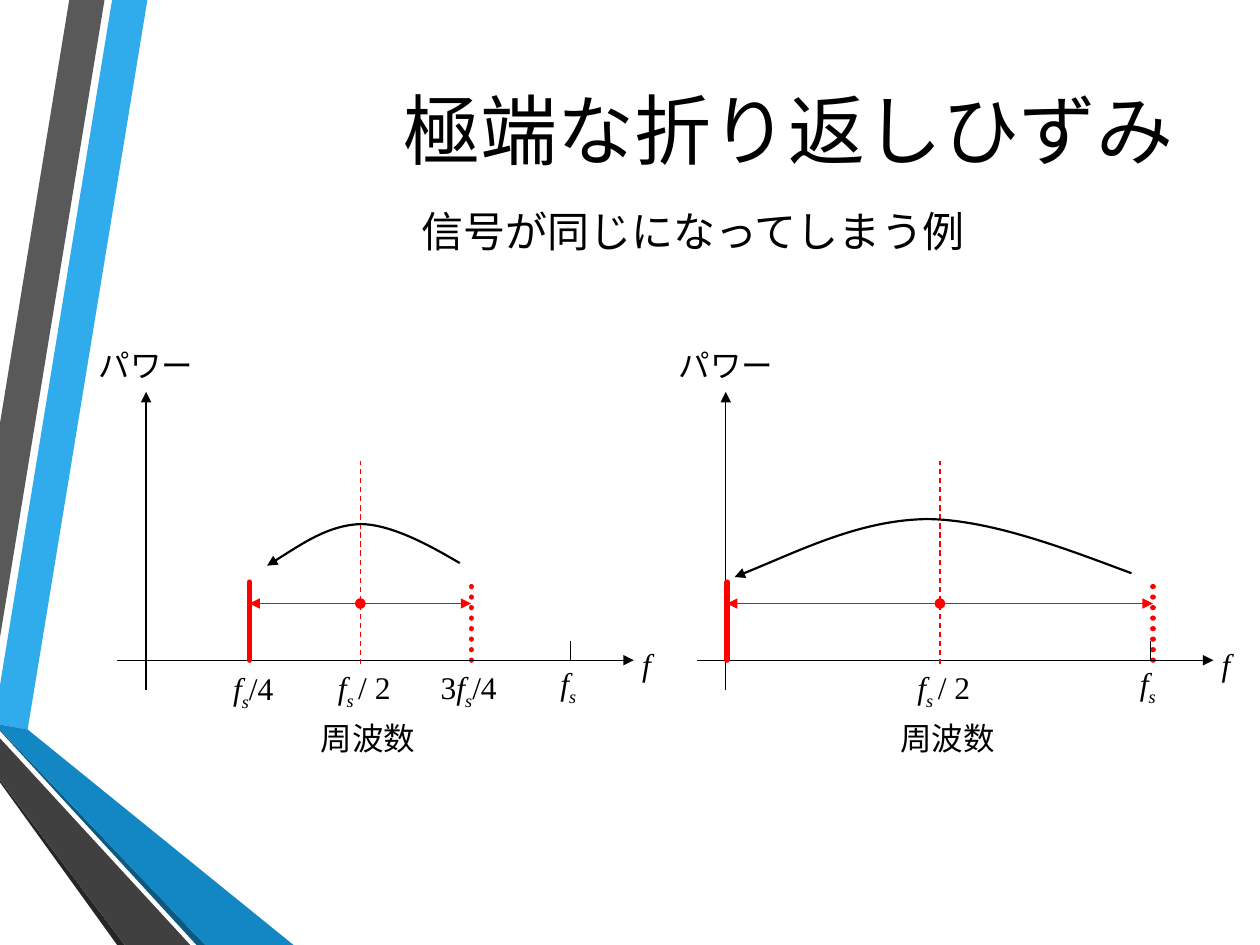
from dataclasses import dataclass

from lxml import etree
from pptx import Presentation
from pptx.dml.color import RGBColor
from pptx.enum.dml import MSO_LINE
from pptx.enum.shapes import MSO_CONNECTOR
from pptx.enum.text import MSO_ANCHOR, MSO_AUTO_SIZE, PP_ALIGN
from pptx.oxml.ns import qn
from pptx.util import Inches, Pt

STRAIGHT = MSO_CONNECTOR.STRAIGHT
DASH, DOTS = MSO_LINE.DASH, MSO_LINE.ROUND_DOT
CENTER, RIGHT = PP_ALIGN.CENTER, PP_ALIGN.RIGHT
MIDDLE = MSO_ANCHOR.MIDDLE
FIT_SHAPE = MSO_AUTO_SIZE.SHAPE_TO_FIT_TEXT


@dataclass(frozen=True)
class Theme:
    ink: str = "000000"
    signal: str = "FF0000"
    heading_font: str = "Cabin"
    label_font: str = "Times New Roman"
    title_size: int = 44
    subtitle_size: int = 24
    label_size: int = 18
    thin: float = 0.75
    curve: float = 1.25
    thick: float = 3


THEME = Theme()

RIBBONS = [
    ("30ACEC", [(0, 5.44), (0, 5.75), (0.22, 5.79), (1.17, 0), (0.89, 0)]),
    ("595959", [(0.83, 0), (0.55, 0), (0, 3.36), (0, 5.06)]),
    ("262626", [(0, 6.19), (0, 6.21), (0.93, 7.5), (0.99, 7.5)]),
    ("0C5A82", [(0, 5.79), (0, 5.8), (1.56, 7.5), (1.63, 7.5)]),
    ("1287C3", [(0, 5.79), (1.63, 7.5), (2.33, 7.5), (0.22, 5.79), (0, 5.75)]),
    ("404040", [(0, 6.19), (0.99, 7.5), (1.51, 7.5), (0, 5.86)]),
]

# Label runs: (text, italic, subscript)
F, SUB_S = ("f", True, False), ("s", True, True)
FS = [F, SUB_S]
FS_HALF = [F, ("s ", True, True), ("/ 2", False, False)]
FS_QUARTER = [*FS, ("/4", False, False)]
FS_THREE_QUARTERS = [("3", False, False), *FS_QUARTER]

BASE, ARROW_LEVEL = 5.24, 4.79
HALF, FULL = 1.7, 3.37  # distances of fs/2 and fs from the power axis
LABEL_HEIGHT = 0.4


def color(code):
    return RGBColor.from_string(code)


def format_span(span, size, font):
    span.font.size = Pt(size)
    span.font.name = font
    span.font.color.rgb = color(THEME.ink)


def add_freeform(shapes, points, close):
    points = [(Inches(x), Inches(y)) for x, y in points]
    builder = shapes.build_freeform(*points[0])
    builder.add_line_segments(points[1:], close=close)
    shape = builder.convert_to_shape()
    shape.shadow.inherit = False
    return shape


def add_ribbon(page, fill, points):
    ribbon = add_freeform(page.shapes, points, close=True)
    ribbon.fill.solid()
    ribbon.fill.fore_color.rgb = color(fill)
    ribbon.line.fill.background()


def style_line(line, code, width, dash=None, head=None, tail=None, cap="flat"):
    line.color.rgb = color(code)
    line.width = Pt(width)
    if dash:
        line.dash_style = dash
    outline = line.color and line.fill and line._get_or_add_ln()
    outline.set("cap", cap)
    for tag, kind in (("a:headEnd", head), ("a:tailEnd", tail)):
        if kind:
            etree.SubElement(outline, qn(tag), type=kind)


def add_line(group, start, end, code=THEME.ink, width=THEME.thin, **style):
    ends = [Inches(value) for value in (*start, *end)]
    connector = group.shapes.add_connector(STRAIGHT, *ends)
    style_line(connector.line, code, width, **style)
    etree.SubElement(connector._element.spPr, qn("a:effectLst"))


def add_curve(group, points):
    """Draw Bezier pieces: a start point, then three points for each piece."""
    shape = add_freeform(group.shapes, points, close=False)
    shape.fill.background()
    style_line(shape.line, THEME.ink, THEME.curve, tail="triangle")
    segments = list(shape._element.iter(qn("a:lnTo")))
    for first in range(0, len(segments), 3):
        piece = segments[first:first + 3]
        bezier = etree.Element(qn("a:cubicBezTo"))
        piece[0].addprevious(bezier)
        for segment in piece:
            bezier.append(segment[0])
            segment.getparent().remove(segment)


def add_label(group, center, top, runs, width=1.32, font=THEME.label_font):
    box = group.shapes.add_textbox(Inches(center - width / 2), Inches(top),
                                   Inches(width), Inches(LABEL_HEIGHT))
    frame = box.text_frame
    frame.word_wrap = True
    frame.auto_size = FIT_SHAPE
    para = frame.paragraphs[0]
    para.alignment = CENTER
    for text, italic, subscript in runs:
        span = para.add_run()
        span.text = text
        format_span(span, THEME.label_size, font)
        span.font.italic = italic
        if subscript:
            span.font._element.set("baseline", "-25000")


def add_headings(page):
    title = page.shapes.title
    title.left, title.top = Inches(0.92), Inches(0.46)
    title.width, title.height = Inches(8.5), Inches(1.12)
    title.text_frame.text = "極端な折り返しひずみ"
    title.text_frame.vertical_anchor = MIDDLE
    para = title.text_frame.paragraphs[0]
    para.alignment = RIGHT
    format_span(para.runs[0], THEME.title_size, THEME.heading_font)

    box = page.shapes.add_textbox(Inches(1.21), Inches(1.58), Inches(8.58), Inches(0.63))
    box.text_frame.word_wrap = True
    box.text_frame.text = "信号が同じになってしまう例"
    para = box.text_frame.paragraphs[0]
    para.alignment = CENTER
    para.space_before = para.space_after = Pt(6)
    format_span(para.runs[0], THEME.subtitle_size, THEME.label_font)


def add_spectrum(page, origin, reach, bar_top, curve):
    """Draw a spectrum whose two components lie `reach` either side of fs/2."""
    group = page.shapes.add_group_shape()
    middle, sampling = origin + HALF, origin + FULL
    low, high = middle - reach, middle + reach

    add_label(group, origin + 3.97, 5.07, [F])
    add_label(group, origin, 2.7, [("パワー", False, False)], font=THEME.heading_font)
    add_label(group, sampling - 0.02, 5.22, FS)
    add_line(group, (high, BASE), (high, bar_top), THEME.signal, THEME.thick,
             dash=DOTS, cap="rnd")
    add_line(group, (origin - 0.23, BASE), (origin + 3.87, BASE), tail="triangle")
    add_line(group, (origin, 5.48), (origin, 3.11), tail="triangle")
    add_line(group, (sampling, BASE), (sampling, 5.09))
    add_line(group, (middle, 5.27), (middle, 3.66), THEME.signal, dash=DASH)
    add_label(group, middle + 0.03, 5.25, FS_HALF, width=1.09)
    add_line(group, (low, BASE), (low, 4.62), THEME.signal, THEME.thick, cap="rnd")
    for target in (high, low):
        add_line(group, (middle, ARROW_LEVEL), (target, ARROW_LEVEL), THEME.signal,
                 head="oval", tail="triangle")
    add_label(group, middle + 0.06, 5.66, [("周波数", False, False)])
    add_curve(group, curve)
    return group


def main():
    deck = Presentation()
    deck.slide_width, deck.slide_height = Inches(10), Inches(7.5)
    page = deck.slides.add_slide(deck.slide_layouts[5])
    for fill, points in RIBBONS:
        add_ribbon(page, fill, points)
    add_headings(page)

    quarter = add_spectrum(page, 1.16, 0.88, 4.62, [
        (3.65, 4.47), (3.43, 4.34), (3.11, 4.16), (2.86, 4.16),
        (2.6, 4.17), (2.35, 4.35), (2.12, 4.49)])
    add_label(quarter, 3.72, 5.25, FS_THREE_QUARTERS)
    add_label(quarter, 2.01, 5.26, FS_QUARTER, width=1.02)
    add_spectrum(page, 5.76, 1.69, 4.6, [
        (8.98, 4.55), (8.52, 4.38), (7.87, 4.12), (7.35, 4.12),
        (6.82, 4.13), (6.31, 4.39), (5.83, 4.58)])
    deck.save("out.pptx")


if __name__ == "__main__":
    main()
